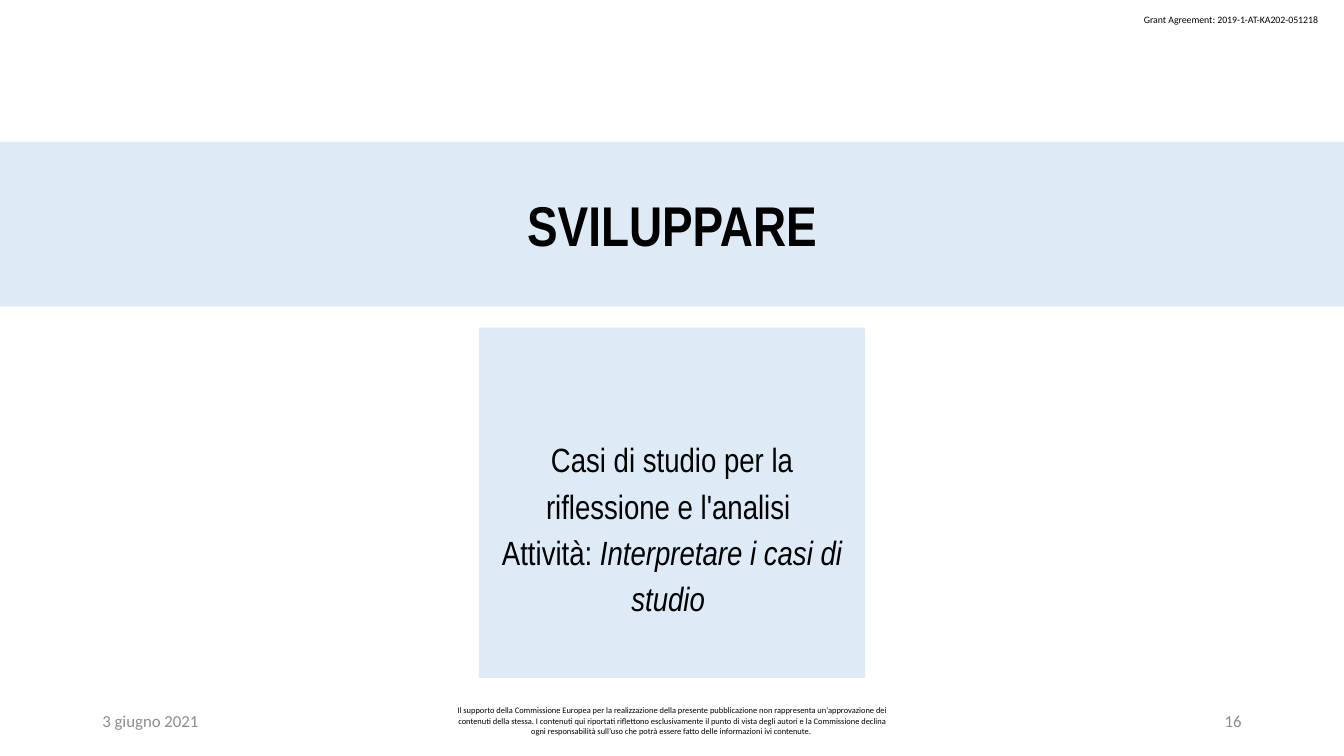
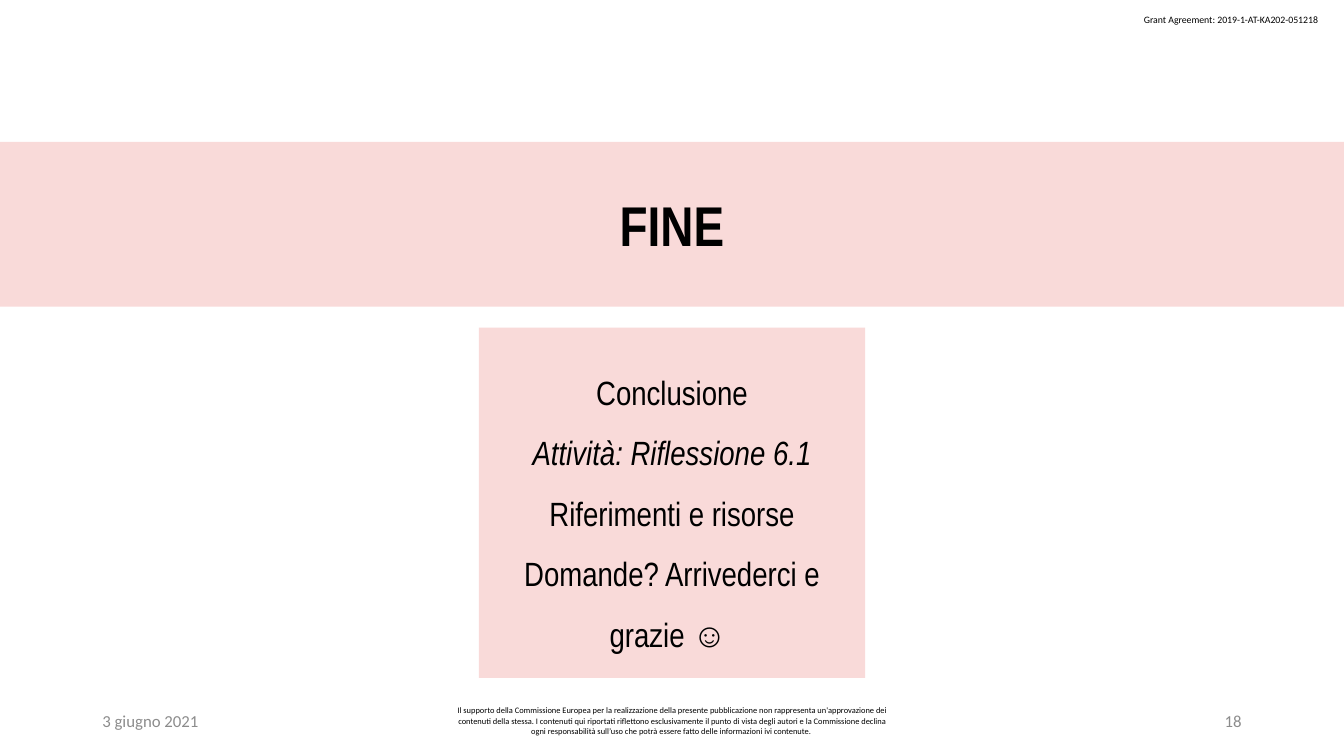
from pptx import Presentation
from pptx.dml.color import RGBColor
from pptx.enum.shapes import MSO_SHAPE
from pptx.enum.text import MSO_ANCHOR, MSO_AUTO_SIZE, PP_ALIGN
from pptx.util import Inches, Pt

LEFT, CENTER, RIGHT = PP_ALIGN.LEFT, PP_ALIGN.CENTER, PP_ALIGN.RIGHT
TOP, MIDDLE = MSO_ANCHOR.TOP, MSO_ANCHOR.MIDDLE
RECTANGLE = MSO_SHAPE.RECTANGLE
NO_AUTOFIT = MSO_AUTO_SIZE.NONE

COLORS = {"text": "000000", "muted": "8C8C8C", "blue": "DEEBF7", "pink": "F9DAD9"}
DISPLAY_FONT, SMALL_FONT = "Arial Narrow", "Calibri"
COLUMNS, ROWS = 160, 90
TITLE_ONLY = 5
CARD_WIDTH = 46

GRANT = "Grant Agreement: 2019-1-AT-KA202-051218"
DATE = "3 giugno 2021"
DISCLAIMER = (
    "Il supporto della Commissione Europea per la realizzazione della presente "
    "pubblicazione non rappresenta un'approvazione dei contenuti della stessa. "
    "I contenuti qui riportati riflettono esclusivamente il punto di vista degli "
    "autori e la Commissione declina ogni responsabilità sull’uso che potrà essere "
    "fatto delle informazioni ivi contenute. "
)

SECTIONS = [
    {
        "title": "SVILUPPARE", "color": "blue", "number": "16",
        "spacing": 1.15, "top_inset": 0.53,
        "lines": [
            [("Casi di studio per la riflessione e l'analisi ", False)],
            [("Attività: ", False), ("Interpretare i casi di studio ", True)],
        ],
    },
    {
        "title": "FINE", "color": "pink", "number": "18",
        "spacing": 1.5, "top_inset": 0.07,
        "lines": [
            [("Conclusione", False)],
            [("Attività: Riflessione 6.1", True)],
            [("Riferimenti e risorse", False)],
            [("Domande? Arrivederci e grazie ☺ ", False)],
        ],
    },
]


class Deck:
    def __init__(self):
        self.presentation = Presentation()
        self.presentation.slide_width = Inches(13.33)
        self.presentation.slide_height = Inches(7.5)
        self.slide = None

    def new_slide(self):
        layout = self.presentation.slide_layouts[TITLE_ONLY]
        self.slide = self.presentation.slides.add_slide(layout)

    def box(self, left, top, width, height):
        column = self.presentation.slide_width / COLUMNS
        row = self.presentation.slide_height / ROWS
        return int(left * column), int(top * row), int(width * column), int(height * row)

    def fill_shape(self, shape, color):
        shape.fill.solid()
        shape.fill.fore_color.rgb = RGBColor.from_string(COLORS[color])
        shape.line.fill.background()

    def add_text(self, shape, lines, size, font=SMALL_FONT, color="text", bold=False,
                 align=LEFT, anchor=MIDDLE, spacing=1.0, insets=(0.1, 0.05, 0.05)):
        frame = shape.text_frame
        frame.word_wrap = True
        frame.auto_size = NO_AUTOFIT
        frame.vertical_anchor = anchor
        side, top, bottom = insets
        frame.margin_left = frame.margin_right = Inches(side)
        frame.margin_top, frame.margin_bottom = Inches(top), Inches(bottom)
        for index, line in enumerate(lines):
            paragraph = frame.add_paragraph() if index else frame.paragraphs[0]
            paragraph.alignment = align
            paragraph.line_spacing = spacing
            for text, italic in line:
                run = paragraph.add_run()
                run.text = text
                run.font.name = font
                run.font.size = Pt(size)
                run.font.bold = bold
                run.font.italic = italic
                run.font.color.rgb = RGBColor.from_string(COLORS[color])

    def title_band(self, text, color):
        title = self.slide.shapes.title
        title.left, title.top, title.width, title.height = self.box(0, 16.9, COLUMNS, 19.6)
        self.fill_shape(title, color)
        self.add_text(title, [[(text, False)]], 40, DISPLAY_FONT, bold=True, align=CENTER,
                      insets=(0.13, 0.07, 0.07))

    def card(self, lines, color, spacing, top_inset):
        left = (COLUMNS - CARD_WIDTH) / 2
        card = self.slide.shapes.add_shape(RECTANGLE, *self.box(left, 39, CARD_WIDTH, 41.7))
        card.shadow.inherit = False
        self.fill_shape(card, color)
        self.add_text(card, lines, 24, DISPLAY_FONT, align=CENTER, spacing=spacing,
                      insets=(0.13, top_inset, 0.07))

    def label(self, text, left, top, width, height, size, **style):
        label = self.slide.shapes.add_textbox(*self.box(left, top, width, height))
        self.add_text(label, [[(text, False)]], size, **style)

    def header_and_footer(self, number):
        self.label(GRANT, 135, 1, 23.6, 2.6, 7, anchor=TOP)
        footer = {"top": 83.4, "height": 4.8}
        self.label(DATE, left=11, width=36, size=12, color="muted", **footer)
        self.label(DISCLAIMER, left=53, width=54, size=6, align=CENTER, **footer)
        self.label(number, left=113, width=36, size=12, color="muted", align=RIGHT, **footer)


def main():
    deck = Deck()
    for section in SECTIONS:
        deck.new_slide()
        deck.header_and_footer(section["number"])
        deck.title_band(section["title"], section["color"])
        deck.card(section["lines"], section["color"], section["spacing"], section["top_inset"])
    deck.presentation.save("out.pptx")


if __name__ == "__main__":
    main()
